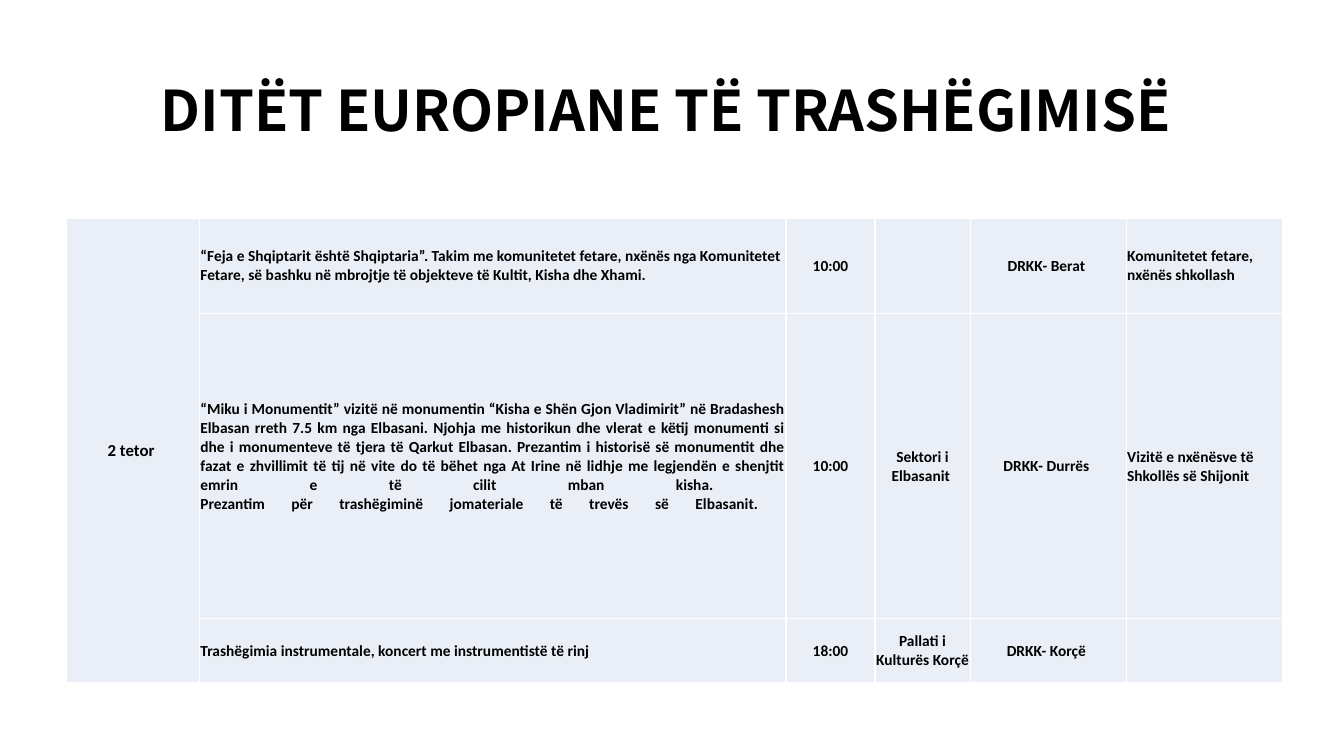
from copy import deepcopy

from lxml.etree import SubElement as Sub
from pptx import Presentation
from pptx.dml.color import RGBColor as Rgb
from pptx.enum.text import MSO_ANCHOR as Anchor, PP_ALIGN as Align
from pptx.oxml.ns import qn
from pptx.util import Pt

COLORS = {"text": "000000", "cell": "EAEFF7", "line": "FFFFFF"}
COLS = [95, 419, 63.5, 68, 111.5, 111.5]
ROWS = [68, 218, 45.5]
ALIGNS = [Align.CENTER, Align.JUSTIFY] + [Align.CENTER] * 3 + [Align.LEFT]

EVENTS = [
    ["2 tetor ",
     "“Feja e Shqiptarit është Shqiptaria”. Takim me komunitetet fetare, "
     "nxënës nga Komunitetet Fetare, së bashku në mbrojtje të objekteve "
     "të Kultit, Kisha dhe Xhami.",
     "10:00", "", "DRKK- Berat ", "Komunitetet fetare, nxënës shkollash"],
    ["",
     "“Miku i Monumentit” vizitë në monumentin “Kisha e Shën Gjon "
     "Vladimirit” në Bradashesh Elbasan rreth 7.5 km nga Elbasani. Njohja "
     "me historikun dhe vlerat e këtij monumenti si dhe i monumenteve të "
     "tjera të Qarkut Elbasan. Prezantim i historisë së monumentit dhe "
     "fazat e zhvillimit të tij në vite do të bëhet nga At Irine në lidhje "
     "me legjendën e shenjtit emrin e të cilit mban kisha. \v"
     "Prezantim për trashëgiminë jomateriale të trevës së Elbasanit. \v",
     "10:00", "Sektori i Elbasanit ", "DRKK- Durrës ",
     "Vizitë e nxënësve të Shkollës së Shijonit"],
    ["", "Trashëgimia instrumentale, koncert me instrumentistë të rinj",
     "18:00", "Pallati i Kulturës Korçë", "DRKK- Korçë ", ""],
]


def style(para, font, size, align):
    para.alignment = align
    for run in para.runs:
        run.font.name, run.font.size, run.font.bold = font, Pt(size), True
        run.font.color.rgb = Rgb.from_string(COLORS["text"])
    # Line breaks and the paragraph end take the size of the text
    if para.runs:
        props = para.runs[0].font._element
        for brk in para._p.findall(qn("a:br")):
            brk.append(deepcopy(props))
        end = Sub(para._p, qn("a:endParaRPr"))
        end.set("sz", str(size * 100))


def border(cell):
    props = cell._tc.get_or_add_tcPr()
    for side in ("lnL", "lnR", "lnT", "lnB"):
        line = Sub(props, qn("a:" + side), w=str(Pt(1)))
        fill = Sub(line, qn("a:solidFill"))
        Sub(fill, qn("a:srgbClr"), val=COLORS["line"])


def add_title(slide, left, top, width, height):
    title = slide.shapes.title
    title.left, title.top = Pt(left), Pt(top)
    title.width, title.height = Pt(width), Pt(height)
    frame = title.text_frame
    frame.text = "DITËT EUROPIANE TË TRASHËGIMISË "
    frame.vertical_anchor = Anchor.MIDDLE
    frame.paragraphs[0].line_spacing = 0.9
    style(frame.paragraphs[0], "Noto Sans CJK KR", 40, Align.CENTER)


def add_events(slide, left, top):
    table = slide.shapes.add_table(
        len(ROWS), len(COLS), Pt(left), Pt(top),
        Pt(sum(COLS)), Pt(sum(ROWS))).table
    table.first_row = table.horz_banding = False
    for col, width in zip(table.columns, COLS):
        col.width = Pt(width)
    for row, height in zip(table.rows, ROWS):
        row.height = Pt(height)

    # The date spans all of its events
    table.cell(0, 0).merge(table.cell(len(ROWS) - 1, 0))

    for r, texts in enumerate(EVENTS):
        for c, text in enumerate(texts):
            cell = table.cell(r, c)
            border(cell)
            cell.fill.solid()
            cell.fill.fore_color.rgb = Rgb.from_string(COLORS["cell"])
            cell.vertical_anchor = Anchor.MIDDLE
            cell.margin_left = cell.margin_right = cell.margin_top = Pt(0.7)
            cell.margin_bottom = 0
            if text:
                cell.text_frame.text = text
                align = Align.LEFT if (r, c) == (0, 1) else ALIGNS[c]
                style(cell.text_frame.paragraphs[0], "Calibri",
                      11 if c else 12, align)


def main():
    deck = Presentation()
    deck.slide_width, deck.slide_height = Pt(960), Pt(540)
    slide = deck.slides.add_slide(deck.slide_layouts[5])
    add_title(slide, 66, 29, 828, 104)
    add_events(slide, 47.5, 155.75)
    deck.save("out.pptx")


if __name__ == "__main__":
    main()
